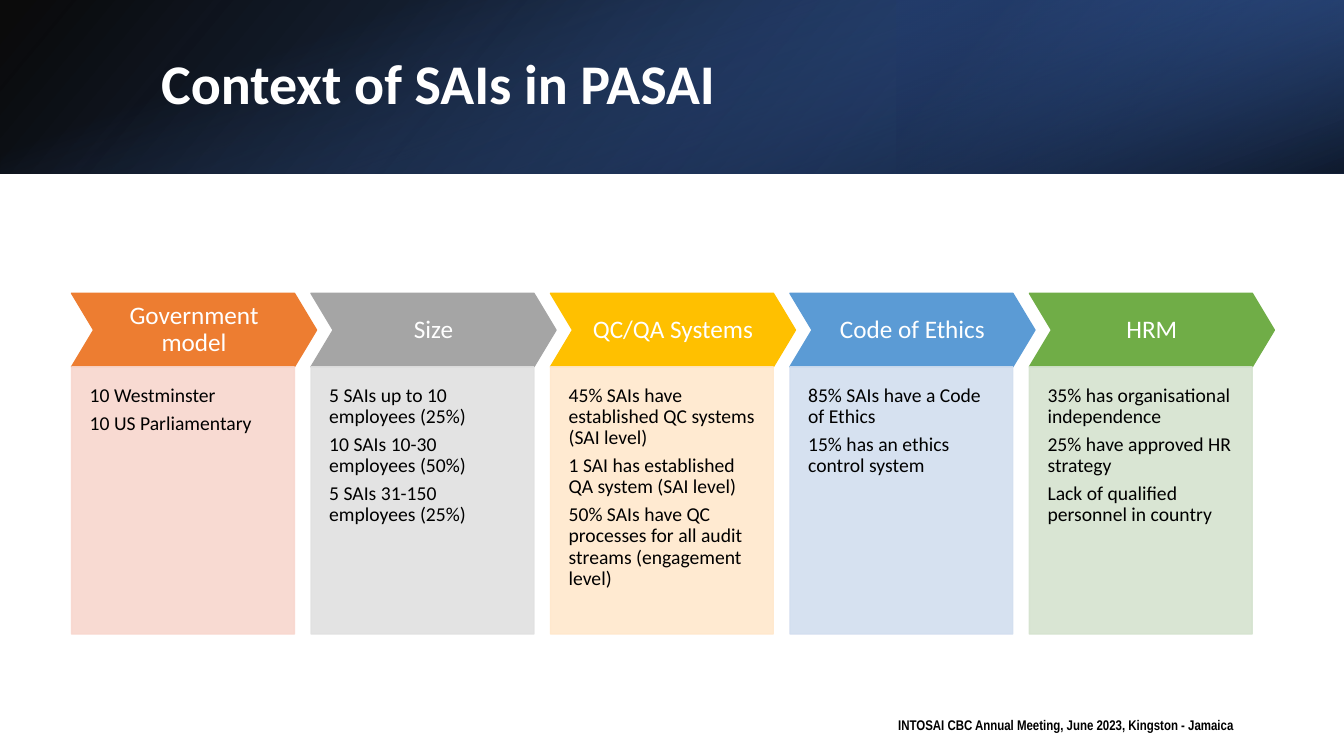
"""Build the slide on the context of SAIs in PASAI."""
from dataclasses import dataclass, field

from pptx import Presentation
from pptx import oxml
from pptx.dml import color
from pptx.enum import shapes, text
from pptx.oxml import ns
from pptx import util as u

BLACK, WHITE = "000000", "FFFFFF"
SLIDE_WIDTH, SLIDE_HEIGHT = 13.33, 7.5
BAND_HEIGHT = 1.72
COLUMNS_LEFT, COLUMN_PITCH, COLUMN_WIDTH = 0.71, 9.5 / 4, 2.21
CHEVRON_TOP, CHEVRON_WIDTH, CHEVRON_HEIGHT = 2.91, 2.43, 0.73
PANEL_HEIGHT = 2.65
PANEL_OPACITY = 90


@dataclass
class Frame:
    """Position and size in inches."""
    left: float
    top: float
    width: float
    height: float

    def inches(self) -> list:
        """Return the four lengths for an add method."""
        return [u.Inches(n) for n in (self.left, self.top, self.width, self.height)]


@dataclass
class Band:
    """Gradient layer of the header; stops are position, colour, opacity."""
    frame: Frame
    angle: int
    stops: list
    rotation: int = 0
    flipped: bool = False


@dataclass
class Column:
    """Topic with its colours and statements."""
    heading: str
    chevron_fill: str
    panel_fill: str
    statements: list


@dataclass
class TextStyle:
    """Format values for a text frame, its paragraphs and their fonts."""
    colour: str
    font: dict
    frame: dict = field(default_factory=dict)
    para: dict = field(default_factory=dict)


BANDS = [
    Band(Frame(0, 0, SLIDE_WIDTH, BAND_HEIGHT), 140,
         [(0, BLACK, 96), (100, "2F5597", 100)], flipped=True),
    Band(Frame(8.89, 0, 4.44, BAND_HEIGHT), 320,
         [(19, "203864", 68), (100, "4472C4", 79)], rotation=180, flipped=True),
    Band(Frame((SLIDE_WIDTH - BAND_HEIGHT) / 2, (BAND_HEIGHT - SLIDE_WIDTH) / 2,
               BAND_HEIGHT, SLIDE_WIDTH), 340,
         [(23, "4472C4", 0), (99, BLACK, 74)], rotation=90),
]

COLUMNS = [
    Column("Government model", "ED7D31", "F8D7CE",
           ["10 Westminster", "10 US Parliamentary"]),
    Column("Size", "A5A5A5", "E1E1E1",
           ["5 SAIs up to 10 employees (25%)", "10 SAIs 10-30 employees (50%)",
            "5 SAIs 31-150 employees (25%)"]),
    Column("QC/QA Systems", "FFC000", "FFE8CC",
           ["45% SAIs have established QC systems (SAI level)",
            "1 SAI has established QA system (SAI level)",
            "50% SAIs have QC processes for all audit streams (engagement level)"]),
    Column("Code of Ethics", "5B9BD5", "D2DEEF",
           ["85% SAIs have a Code of Ethics", "15% has an ethics control system"]),
    Column("HRM", "70AD47", "D5E3CF",
           ["35% has organisational independence", "25% have approved HR strategy",
            "Lack of qualified personnel in country"]),
]


def margins(left: float, top: float, right: float, bottom: float) -> dict:
    """Return text frame margins as format values."""
    return {"margin_left": u.Inches(left), "margin_top": u.Inches(top),
            "margin_right": u.Inches(right), "margin_bottom": u.Inches(bottom)}


TITLE_STYLE = TextStyle(
    WHITE, {"name": "Calibri", "size": u.Pt(40), "bold": True},
    {"vertical_anchor": text.MSO_ANCHOR.MIDDLE}, {"line_spacing": 0.9})
HEADING_STYLE = TextStyle(
    WHITE, {"name": "Calibri", "size": u.Pt(18)},
    {"vertical_anchor": text.MSO_ANCHOR.MIDDLE, **margins(0.09, 0.09, 0.09, 0.09)},
    {"alignment": text.PP_ALIGN.CENTER, "line_spacing": 0.9})
PANEL_STYLE = TextStyle(
    BLACK, {"name": "Calibri", "size": u.Pt(14)},
    {"vertical_anchor": text.MSO_ANCHOR.TOP, **margins(0.18, 0.18, 0.18, 0.35)},
    {"alignment": text.PP_ALIGN.LEFT, "line_spacing": 0.9, "space_after": u.Pt(4.9)})
FOOTER_STYLE = TextStyle(
    BLACK, {"name": "Arial Narrow", "size": u.Pt(10), "bold": True},
    {"auto_size": text.MSO_AUTO_SIZE.SHAPE_TO_FIT_TEXT})


def apply(target, values: dict) -> None:
    """Set each format value on the target."""
    for name, value in values.items():
        setattr(target, name, value)


def paint(colour_format, colour: str) -> None:
    """Give a colour format a hex colour."""
    colour_format.rgb = color.RGBColor.from_string(colour)


def write(box, lines: list, style: TextStyle) -> None:
    """Fill a shape with one paragraph per line."""
    frame = box.text_frame
    apply(frame, {"word_wrap": True, **style.frame})
    for index, line in enumerate(lines):
        para = frame.add_paragraph() if index else frame.paragraphs[0]
        apply(para, style.para)
        span = para.add_run()
        span.text = line
        apply(span.font, style.font)
        paint(span.font.color, style.colour)


def add_band(page, band: Band) -> None:
    """Draw a gradient layer of the header."""
    box = page.shapes.add_shape(shapes.MSO_SHAPE.RECTANGLE, *band.frame.inches())
    box.rotation = band.rotation
    box.shadow.inherit = False
    box.line.fill.background()
    properties = box._element.spPr
    if band.flipped:
        properties.find(ns.qn("a:xfrm")).set("flipH", "1")
    stops = "".join(
        f'<a:gs pos="{position * 1000}"><a:srgbClr val="{colour}">'
        f'<a:alpha val="{opacity * 1000}"/></a:srgbClr></a:gs>'
        for position, colour, opacity in band.stops)
    gradient = oxml.parse_xml(
        f'<a:gradFill {ns.nsdecls("a")} rotWithShape="1"><a:gsLst>{stops}</a:gsLst>'
        f'<a:lin ang="{band.angle * 60000}" scaled="0"/></a:gradFill>')
    properties.find(ns.qn("a:prstGeom")).addnext(gradient)


def add_block(page, kind, frame: Frame, colour: str, opacity: int = 100):
    """Draw a shape whose fill and line share one colour."""
    box = page.shapes.add_shape(kind, *frame.inches())
    box.shadow.inherit = False
    box.fill.solid()
    paint(box.fill.fore_color, colour)
    paint(box.line.color, colour)
    box.line.width = u.Pt(1)
    if opacity < 100:
        for element in box._element.spPr.iter(ns.qn("a:srgbClr")):
            alpha = oxml.parse_xml(
                f'<a:alpha {ns.nsdecls("a")} val="{opacity * 1000}"/>')
            element.append(alpha)
    return box


def add_column(page, column: Column, left: float) -> None:
    """Draw a chevron heading above its panel of statements."""
    chevron = add_block(page, shapes.MSO_SHAPE.CHEVRON,
                        Frame(left, CHEVRON_TOP, CHEVRON_WIDTH, CHEVRON_HEIGHT),
                        column.chevron_fill)
    chevron.adjustments[0] = 0.3
    write(chevron, [column.heading], HEADING_STYLE)
    panel = add_block(page, shapes.MSO_SHAPE.RECTANGLE,
                      Frame(left, CHEVRON_TOP + CHEVRON_HEIGHT, COLUMN_WIDTH, PANEL_HEIGHT),
                      column.panel_fill, PANEL_OPACITY)
    write(panel, column.statements, PANEL_STYLE)


def main() -> None:
    """Assemble and save the deck."""
    deck = Presentation()
    deck.slide_width, deck.slide_height = u.Inches(SLIDE_WIDTH), u.Inches(SLIDE_HEIGHT)
    page = deck.slides.add_slide(deck.slide_layouts[6])
    for band in BANDS:
        add_band(page, band)
    title = page.shapes.add_textbox(*Frame(1.5, 0.38, 10.98, 0.96).inches())
    write(title, ["Context of SAIs in PASAI"], TITLE_STYLE)
    for index, column in enumerate(COLUMNS):
        add_column(page, column, COLUMNS_LEFT + index * COLUMN_PITCH)
    footer = page.shapes.add_textbox(*Frame(8.81, 7.06, 3.67, 0.27).inches())
    write(footer, ["INTOSAI CBC Annual Meeting, June 2023, Kingston - Jamaica"], FOOTER_STYLE)
    deck.save("out.pptx")


if __name__ == "__main__":
    main()
